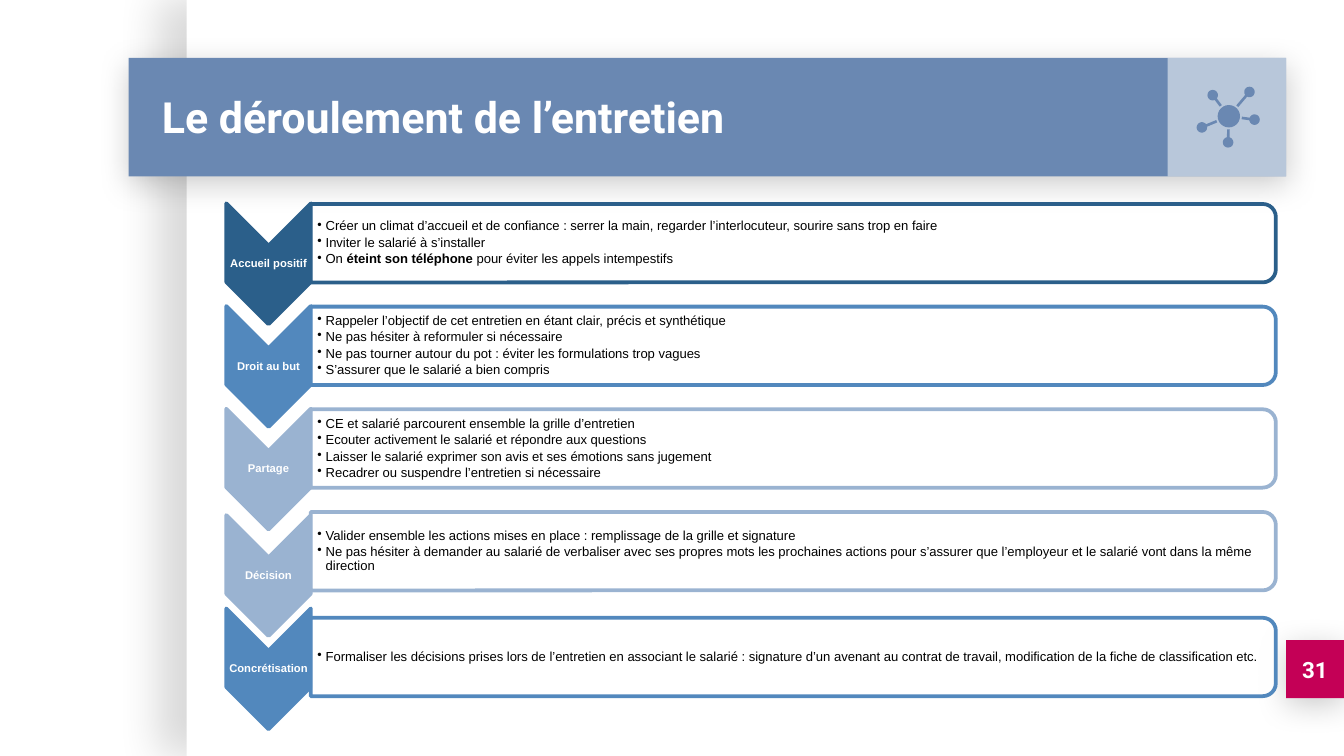
import math

from lxml import etree
from pptx import Presentation
from pptx.dml.color import RGBColor
from pptx.enum.shapes import MSO_SHAPE
from pptx.enum.text import MSO_ANCHOR, MSO_AUTO_SIZE, PP_ALIGN
from pptx.oxml.ns import qn
from pptx.util import Pt

RECT, CHEVRON, OVAL = MSO_SHAPE.RECTANGLE, MSO_SHAPE.CHEVRON, MSO_SHAPE.OVAL
ROUND_TOP = MSO_SHAPE.ROUND_2_SAME_RECTANGLE
LEFT, CENTER = PP_ALIGN.LEFT, PP_ALIGN.CENTER

COLORS = {
    "white": "FFFFFF", "black": "000000", "banner": "6A88B2", "pink": "C40056",
    "dark": "2B5F8A", "medium": "5288BD", "light": "9AB3D1",
}

TITLE = "Le déroulement de l’entretien"
PAGE = "31"

# label, colour, top of the chevron, top of the card, points
STEPS = [
    ("Accueil positif", "dark", 109, 109.3, [
        "Créer un climat d’accueil et de confiance : serrer la main, regarder "
        "l’interlocuteur, sourire sans trop en faire",
        "Inviter le salarié à s’installer",
        [("On ", False), ("éteint son téléphone ", True),
         ("pour éviter les appels intempestifs", False)],
    ]),
    ("Droit au but", "medium", 164, 164.3, [
        "Rappeler l’objectif de cet entretien en étant clair, précis et synthétique",
        "Ne pas hésiter à reformuler si nécessaire",
        "Ne pas tourner autour du pot : éviter les formulations trop vagues",
        "S’assurer que le salarié a bien compris",
    ]),
    ("Partage", "light", 219, 219.3, [
        "CE et salarié parcourent ensemble la grille d’entretien",
        "Ecouter activement le salarié et répondre aux questions",
        "Laisser le salarié exprimer son avis et ses émotions sans jugement",
        "Recadrer ou suspendre l’entretien si nécessaire",
    ]),
    ("Décision", "light", 276, 274.3, [
        "Valider ensemble les actions mises en place : remplissage de la grille et signature",
        "Ne pas hésiter à demander au salarié de verbaliser avec ses propres mots les "
        "prochaines actions pour s’assurer que l’employeur et le salarié vont dans la "
        "même direction",
    ]),
    ("Concrétisation", "medium", 326, 331, [
        "Formaliser les décisions prises lors de l’entretien en associant le salarié : "
        "signature d’un avenant au contrat de travail, modification de la fiche de "
        "classification etc.",
    ]),
]
CHEVRON_LEFT, CHEVRON_W, CHEVRON_H = 121.2, 45.3, 64.7
CARD_LEFT, CARD_W, CARD_H = 166.5, 517, 42

HUB, HUB_RADIUS = (658.3, 62.3), 6
NODES = [(669.4, 49.3), (649.7, 51), (643.9, 68.3), (657.9, 76.3), (672.1, 64.1)]
NODE_RADIUS, STEM_START, STEM_HALF = 2.8, 7, 0.7


def rgb(name):
    return RGBColor.from_string(COLORS[name])


def add_alpha(color_element, percent):
    etree.SubElement(color_element, qn("a:alpha"), val=str(percent * 1000))


def add_block(kind, left, top, width, height, fill, line=None, opacity=100, turned=False):
    """Place a preset by its visible bounds; turned means rotated by 90 degrees."""
    if turned:
        left, top = left + (width - height) / 2, top + (height - width) / 2
        width, height = height, width
    block = slide.shapes.add_shape(kind, Pt(left), Pt(top), Pt(width), Pt(height))
    block.rotation = 90 if turned else 0
    paint(block, fill, line)
    if opacity < 100:
        add_alpha(block.element.spPr.find(".//" + qn("a:srgbClr")), opacity)
    return block


def paint(shape, fill, line=None):
    shape.shadow.inherit = False
    shape.fill.solid()
    shape.fill.fore_color.rgb = rgb(fill)
    if line:
        shape.line.color.rgb = rgb(line)
        shape.line.width = Pt(2)
    else:
        shape.line.fill.background()


def add_shadow(shape, opacity, blur, distance, angle):
    effects = shape.element.spPr.find(qn("a:effectLst"))
    shadow = etree.SubElement(
        effects, qn("a:outerShdw"), blurRad=str(Pt(blur)), dist=str(Pt(distance)),
        dir=str(angle * 60000), algn="ctr", rotWithShape="0")
    add_alpha(etree.SubElement(shadow, qn("a:srgbClr"), val=COLORS["black"]), opacity)


def add_bullet(paragraph):
    paragraph.level = 1
    props = paragraph._p.get_or_add_pPr()
    props.set("marL", str(Pt(4.5)))
    props.set("indent", str(-Pt(4.5)))
    color = etree.SubElement(props, qn("a:buClr"))
    etree.SubElement(color, qn("a:srgbClr"), val=COLORS["black"])
    etree.SubElement(props, qn("a:buChar"), char="•")


def write(box, paragraphs, font="Arial", size=7, color="white", bold=False, align=LEFT,
          insets=(0, 0, 0, 0), spacing=None, after=None, bullets=False):
    """Fill a box; a paragraph is a string or a list of (text, bold) runs."""
    frame = box.text_frame
    frame.word_wrap = True
    frame.auto_size = MSO_AUTO_SIZE.NONE
    frame.vertical_anchor = MSO_ANCHOR.MIDDLE
    (frame.margin_left, frame.margin_top,
     frame.margin_right, frame.margin_bottom) = map(Pt, insets)
    for index, content in enumerate(paragraphs):
        paragraph = frame.paragraphs[0] if index == 0 else frame.add_paragraph()
        if bullets:
            add_bullet(paragraph)
        paragraph.alignment = align
        if spacing:
            paragraph.line_spacing = spacing
        if after:
            paragraph.space_after = Pt(after)
        runs = [(content, bold)] if isinstance(content, str) else content
        for text, run_bold in runs:
            run = paragraph.add_run()
            run.text = text
            run.font.name, run.font.size = font, Pt(size)
            run.font.bold, run.font.color.rgb = run_bold, rgb(color)


def add_textbox(left, top, width, height, paragraphs, **text_format):
    box = slide.shapes.add_textbox(Pt(left), Pt(top), Pt(width), Pt(height))
    write(box, paragraphs, **text_format)


def add_spoke(node):
    """Outline a round node together with the stem that points to the hub."""
    angle = math.atan2(HUB[1] - node[1], HUB[0] - node[0])
    stem = math.dist(HUB, node) - STEM_START
    opening = math.asin(STEM_HALF / NODE_RADIUS)
    sweep = 2 * (math.pi - opening)
    outline = [(NODE_RADIUS * math.cos(opening + sweep * i / 24),
                NODE_RADIUS * math.sin(opening + sweep * i / 24)) for i in range(25)]
    outline += [(stem, -STEM_HALF), (stem, STEM_HALF)]
    points = [(Pt(node[0] + x * math.cos(angle) - y * math.sin(angle)),
               Pt(node[1] + x * math.sin(angle) + y * math.cos(angle))) for x, y in outline]
    builder = slide.shapes.build_freeform(*points[0])
    builder.add_line_segments(points[1:])
    paint(builder.convert_to_shape(), "banner")


prs = Presentation()
prs.slide_width, prs.slide_height = Pt(720), Pt(405)
slide = prs.slides.add_slide(prs.slide_layouts[5])

panel = add_block(RECT, 100, 0, 620, 405, "white")
add_shadow(panel, 15, 22.5, 15, 180)
page_tag = add_block(RECT, 689, 343, 31, 31, "pink")
banner = add_block(RECT, 69, 31, 620, 63.5, "banner")
for raised in (page_tag, banner):
    add_shadow(raised, 20, 16.9, 3.8, 90)
icon_tile = add_block(RECT, 625.5, 31, 63.5, 63.5, "white", opacity=53)

title = slide.shapes.title
icon_tile.element.addnext(title.element)
title.left, title.top, title.width, title.height = Pt(79.5), Pt(30.5), Pt(530.5), Pt(63.5)
write(title, [TITLE], font="Roboto", size=23, bold=True, insets=(7.2,) * 4)
add_textbox(689, 343, 31, 31, [PAGE], font="Roboto", size=12, bold=True,
            align=CENTER, insets=(7.2,) * 4)

for node in NODES:
    add_spoke(node)
add_block(OVAL, HUB[0] - HUB_RADIUS, HUB[1] - HUB_RADIUS, 2 * HUB_RADIUS, 2 * HUB_RADIUS,
          "banner")

for label, color, chevron_top, card_top, points in STEPS:
    add_block(CHEVRON, CHEVRON_LEFT, chevron_top, CHEVRON_W, CHEVRON_H, color, color,
              turned=True)
    add_textbox(CHEVRON_LEFT, chevron_top + CHEVRON_W / 2, CHEVRON_W, CHEVRON_H - CHEVRON_W,
                [label], size=6, bold=True, align=CENTER, spacing=0.9)
    add_block(ROUND_TOP, CARD_LEFT, card_top, CARD_W, CARD_H, "white", color,
              opacity=90, turned=True)
    add_textbox(CARD_LEFT, card_top + 2, CARD_W - 2, CARD_H - 4, points, color="black",
                insets=(3.5, 0, 0, 0), spacing=0.9, after=1.3, bullets=True)

prs.save("out.pptx")
